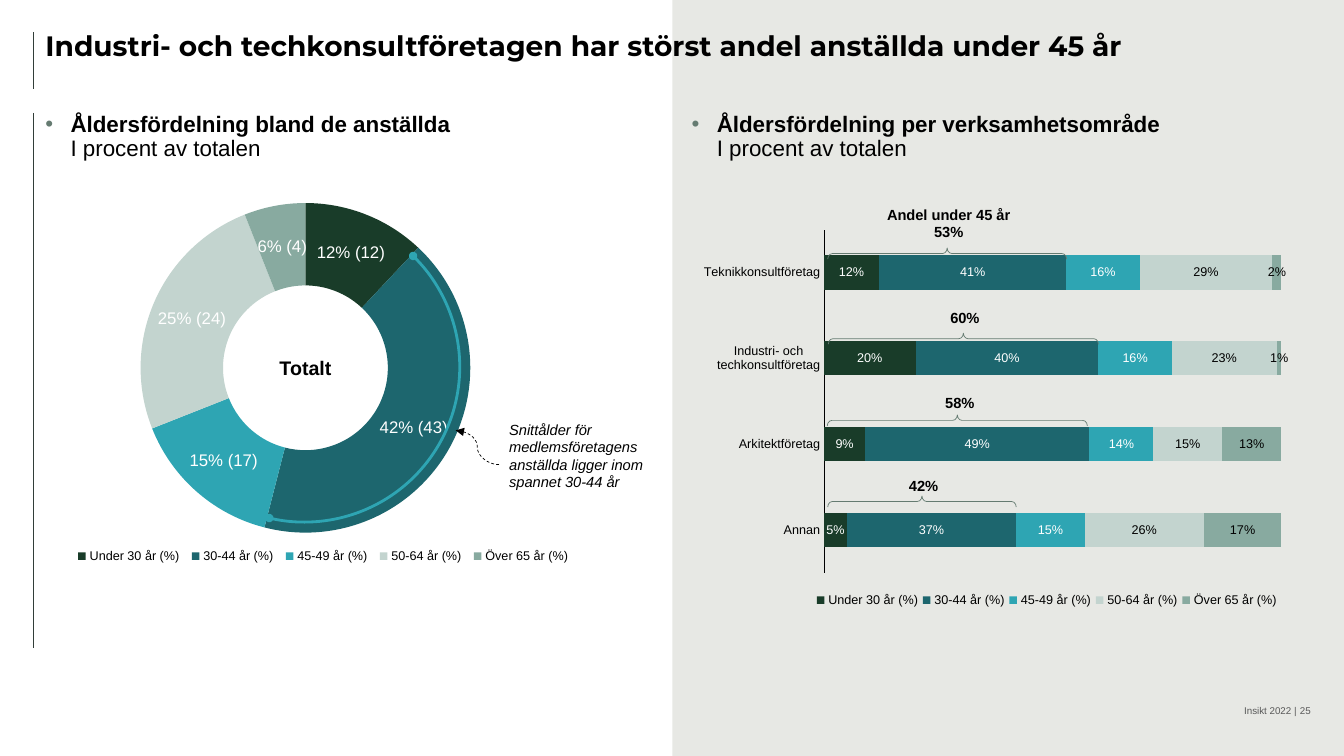
from dataclasses import dataclass

from lxml.etree import SubElement
from pptx import Presentation
from pptx.chart.data import CategoryChartData
from pptx.dml.color import RGBColor
from pptx.enum.chart import XL_CHART_TYPE as Chart, XL_LABEL_POSITION as LabelPos
from pptx.enum.chart import XL_LEGEND_POSITION as LegendPos, XL_TICK_MARK as Tick
from pptx.enum.dml import MSO_LINE
from pptx.enum.shapes import MSO_CONNECTOR as Link, MSO_SHAPE as Shape
from pptx.enum.text import MSO_ANCHOR as Anchor, PP_ALIGN as Align
from pptx.oxml import parse_xml
from pptx.oxml.ns import nsdecls, qn
from pptx.util import Pt

PX = 9144  # 100 px to the inch


@dataclass(frozen=True)
class Theme:
    black: str = "000000"
    white: str = "FFFFFF"
    panel: str = "E7E8E4"
    rule: str = "323E39"
    accent: str = "657B71"
    teal: str = "2EA5B3"
    footer: str = "595959"
    ages: tuple = ("193C29", "1D666E", "2EA5B3", "C3D4CF", "88AAA0")
    font: str = "Arial"
    title_font: str = "Montserrat"
    title: float = 20
    heading: float = 16
    center: float = 14
    slice: float = 12
    note: float = 10.5
    chart: float = 9
    small: float = 7


T = Theme()
AGES = ("Under 30 år (%)", "30-44 år\u00a0(%)", "45-49 år\u00a0(%)",
        "50-64 år\u00a0(%)", "Över 65 år\u00a0(%)")
AGES = tuple(age.replace("\u00a0", " ") for age in AGES)
TOTAL = (12, 42, 15, 25, 6)
TOTAL_LABELS = ("12% (12)", "42% (43)", "15% (17)", "25% (24)", "6% (4)")
AREAS = {
    "Teknikkonsultföretag": (12, 41, 16, 29, 2),
    "Industri- och\ntechkonsultföretag": (20, 40, 16, 23, 1),
    "Arkitektföretag": (9, 49, 14, 15, 13),
    "Annan": (5, 37, 15, 26, 17),
}
# label, bottom of label, top of brace, length of brace
UNDER_45 = (("Andel under 45 år\n53%", 239, 246, 237), ("60%", 324, 330, 268),
            ("58%", 408, 411, 258), ("42%", 491, 492, 187))


def px(*lengths):
    return [n * PX for n in lengths]


def rgb(color):
    return RGBColor.from_string(color)


def style(font, size, color=T.black, bold=False, italic=False, name=T.font):
    font.size, font.bold, font.italic, font.name = Pt(size), bold, italic, name
    font.color.rgb = rgb(color)


# Text
def add_text(s, text, box, size, align=Align.LEFT, anchor=Anchor.TOP, wrap=True,
             subline=None, bullet=None, spacing=None, **fmt):
    tf = s.shapes.add_textbox(*px(*box)).text_frame
    tf.word_wrap, tf.vertical_anchor = wrap, anchor
    tf.margin_left = tf.margin_top = tf.margin_right = tf.margin_bottom = 0
    for i, line in enumerate(text.split("\n")):
        p = tf.paragraphs[0] if i == 0 else tf.add_paragraph()
        p.alignment = align
        if spacing:
            p.line_spacing = spacing
        if bullet:
            add_bullet(p, bullet)
        r = p.add_run()
        r.text = line
        style(r.font, size, **fmt)
    if subline:
        p.add_line_break()
        r = p.add_run()
        r.text = subline
        style(r.font, size)


def add_bullet(p, color):
    pPr = p._p.get_or_add_pPr()
    pPr.set("marL", str(25 * PX))
    pPr.set("indent", str(-25 * PX))
    clr = SubElement(pPr, qn("a:buClr"))
    SubElement(clr, qn("a:srgbClr"), val=color)
    SubElement(pPr, qn("a:buFont"), typeface="Arial")
    SubElement(pPr, qn("a:buChar"), char="•")


# Lines and shapes
def set_line(sp, color, width, dash=None, head=None, tail=None):
    sp.line.color.rgb, sp.line.width = rgb(color), Pt(width)
    if dash:
        sp.line.dash_style = dash
    ln = sp.line._get_or_add_ln()
    for tag, end in (("a:headEnd", head), ("a:tailEnd", tail)):
        if end:
            SubElement(ln, qn(tag), type=end)


def add_line(s, ends, color, kind=Link.STRAIGHT, **fmt):
    sp = s.shapes.add_connector(kind, *px(*ends))
    set_line(sp, color, 0.5, **fmt)
    SubElement(sp._element.spPr, qn("a:effectLst"))


def add_outline(s, kind, box, adjustments, color, width, **fmt):
    sp = s.shapes.add_shape(kind, *px(*box))
    sp.shadow.inherit = False
    sp.fill.background()
    for i, value in enumerate(adjustments):
        sp.adjustments[i] = value
    set_line(sp, color, width, **fmt)
    return sp


def add_brace(s, left, top, length, depth=11):
    box = (left + (length - depth) / 2, top - (length - depth) / 2, depth, length)
    sp = add_outline(s, Shape.RIGHT_BRACE, [round(n) for n in box],
                     (0.42, 0.5), T.accent, 0.5)
    sp.rotation = 270


# Charts
def place(parent, index, x, y, w, h, inner=False):
    for old in parent.findall(qn("c:layout")):
        parent.remove(old)
    target = '<c:layoutTarget val="inner"/>' if inner else ""
    parent.insert(index, parse_xml(
        f'<c:layout {nsdecls("c")}><c:manualLayout>{target}'
        '<c:xMode val="edge"/><c:yMode val="edge"/>'
        f'<c:x val="{x}"/><c:y val="{y}"/><c:w val="{w}"/><c:h val="{h}"/>'
        '</c:manualLayout></c:layout>'))


def add_chart(s, kind, box, categories, series, plot_area, legend_area):
    data = CategoryChartData()
    data.categories = categories
    for name, values in series:
        data.add_series(name, values)
    chart = s.shapes.add_chart(kind, *px(*box), data).chart
    style(chart.font, T.chart)
    chart.has_title = False
    chart.has_legend = True
    chart.legend.position = LegendPos.BOTTOM
    chart.legend.include_in_layout = False
    style(chart.legend.font, T.chart)
    place(chart._chartSpace.chart.plotArea, 0, *plot_area, inner=True)
    place(chart.legend._element, 1, *legend_area)
    return chart


def add_total_chart(s):
    chart = add_chart(s, Chart.DOUGHNUT, (11, 186, 584, 385), AGES, [("Totalt", TOTAL)],
                      (0.22, 0.04, 0.56, 0.85), (0.1, 0.92, 0.86, 0.06))
    chart.plots[0].vary_by_categories = True
    points = chart.plots[0].series[0].points
    for i, (color, label) in enumerate(zip(T.ages, TOTAL_LABELS)):
        points[i].format.fill.solid()
        points[i].format.fill.fore_color.rgb = rgb(color)
        r = points[i].data_label.text_frame.paragraphs[0].add_run()
        r.text = label
        style(r.font, T.slice, T.white)


def add_area_chart(s):
    chart = add_chart(s, Chart.BAR_STACKED, (686, 220, 597, 387), list(AREAS),
                      zip(AGES, zip(*AREAS.values())),
                      (0.22, 0.02, 0.76, 0.88), (0.2, 0.94, 0.78, 0.06))
    plot = chart.plots[0]
    plot.vary_by_categories, plot.gap_width, plot.overlap = False, 150, 100
    for i, (ser, color) in enumerate(zip(plot.series, T.ages)):
        ser.format.fill.solid()
        ser.format.fill.fore_color.rgb = rgb(color)
        labels = ser.data_labels
        labels.show_value, labels.position = True, LabelPos.CENTER
        labels.number_format, labels.number_format_is_linked = r"General\%", False
        style(labels.font, T.chart, T.white if i < 3 else T.black)
    axis = chart.category_axis
    axis.reverse_order = True
    axis.major_tick_mark = axis.minor_tick_mark = Tick.NONE
    axis.format.line.color.rgb, axis.format.line.width = rgb(T.black), Pt(0.75)
    style(axis.tick_labels.font, T.chart)
    scale = chart.value_axis
    scale.minimum_scale, scale.maximum_scale = 0, 100
    scale.has_major_gridlines = scale.visible = False


def main():
    prs = Presentation()
    prs.slide_width, prs.slide_height = px(1333, 750)
    s = prs.slides.add_slide(prs.slide_layouts[6])

    # Right panel and margin rules
    panel = s.shapes.add_shape(Shape.RECTANGLE, *px(667, 0, 666, 750))
    panel.shadow.inherit = False
    panel.fill.solid()
    panel.fill.fore_color.rgb = rgb(T.panel)
    panel.line.fill.background()
    for top, bottom in ((32, 88), (112, 643)):
        add_line(s, (33, top, 33, bottom), T.rule)

    # Title and headings
    add_text(s, "Industri- och techkonsultföretagen har störst andel anställda under 45 år",
             (45, 32, 1255, 56), T.title, spacing=0.9, bold=True, name=T.title_font)
    for left, heading in ((45, "Åldersfördelning bland de anställda"),
                          (686, "Åldersfördelning per verksamhetsområde")):
        add_text(s, heading, (left, 112, 550, 56), T.heading, spacing=0.9, bold=True,
                 subline="I procent av totalen", bullet=T.accent)

    # All employees
    add_total_chart(s)
    add_text(s, "Totalt", (267, 348, 72, 34), T.center, align=Align.CENTER,
             anchor=Anchor.MIDDLE, wrap=False, bold=True)
    arc_angles = (314.4, 103.1)
    add_outline(s, Shape.ARC, (148, 210, 308, 308), [a * 0.6 for a in arc_angles],
                T.teal, 2, head="oval", tail="oval")
    add_text(s, "Snittålder för medlemsföretagens anställda ligger inom spannet 30-44 år",
             (505, 417, 158, 71), T.note, italic=True)
    add_line(s, (495, 461, 452, 427), T.black, Link.CURVE, dash=MSO_LINE.DASH,
             tail="triangle")

    # Employees by area, with the share under 45
    add_area_chart(s)
    for label, bottom, top, length in UNDER_45:
        add_brace(s, 821, top, length)
        add_text(s, label, (823 + length // 2 - 72, bottom - 36, 144, 36), T.note,
                 align=Align.CENTER, anchor=Anchor.BOTTOM, wrap=False, bold=True)

    # Footer
    for text, right in (("Insikt 2022 |", 1286), ("25", 1300)):
        add_text(s, text, (right - 300, 693, 300, 18), T.small, align=Align.RIGHT,
                 anchor=Anchor.BOTTOM, color=T.footer)

    prs.save("out.pptx")


if __name__ == "__main__":
    main()
